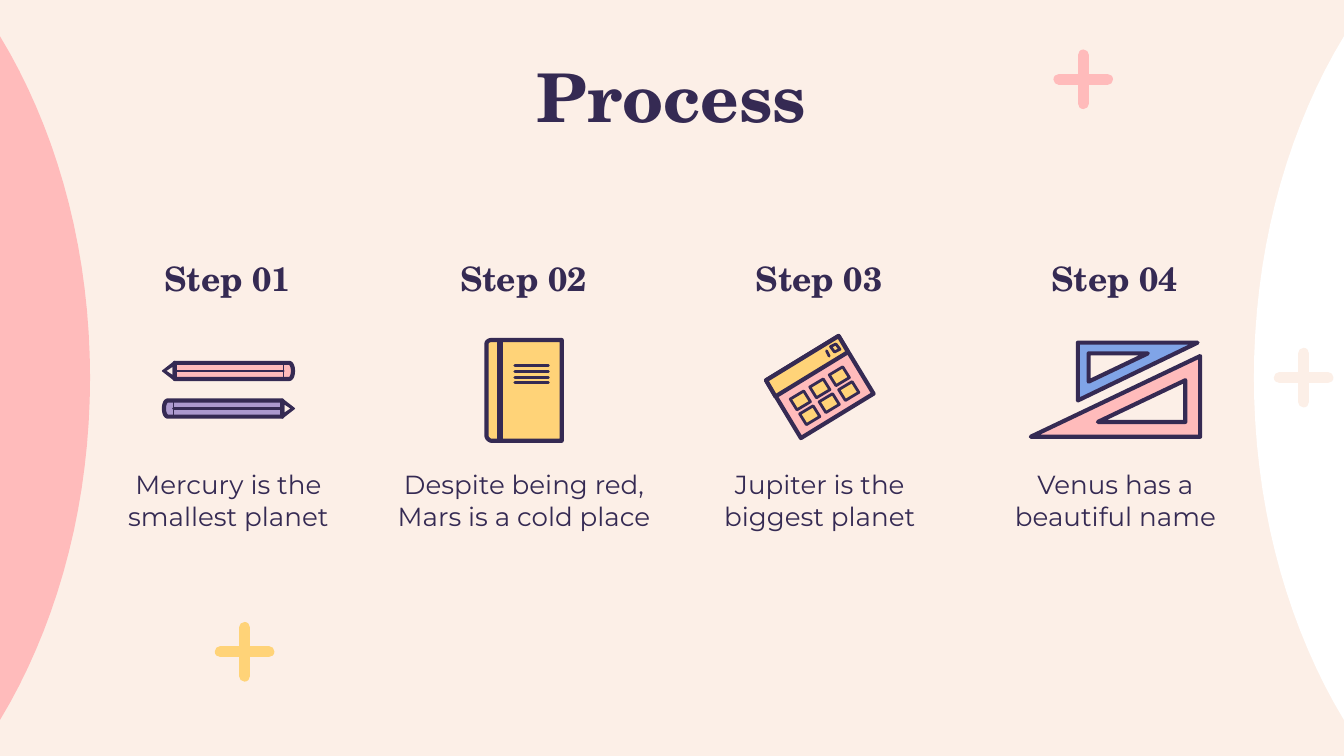
from lxml.etree import SubElement
from pptx import Presentation
from pptx.dml.color import RGBColor
from pptx.enum.shapes import MSO_CONNECTOR
from pptx.enum.text import MSO_ANCHOR, PP_ALIGN
from pptx.oxml.ns import qn
from pptx.util import Cm, Pt

INK, CREAM, PINK, YELLOW = "352A53", "FCEFE7", "FFBBBB", "FFD378"
WHITE, BLUE, PURPLE = "FFFFFF", "80A4E7", "AC99CE"
SERIF, SANS = "TeX Gyre Schola", "Montserrat"
W = 10
H = W * 9 / 16

STEPS = [
    ("Step 01", "Mercury is the smallest planet"),
    ("Step 02", "Despite being red, Mars is a cold place"),
    ("Step 03", "Jupiter is the biggest planet"),
    ("Step 04", "Venus has a beautiful name"),
]
PLUSES = [(8.06, 0.59, PINK), (9.7, 2.81, CREAM), (1.82, 4.85, YELLOW)]

# Outlines in inches: pairs are corners, sextuples are Bezier curves.
SIDE_ARC = [(9.33, 2.81), (9.33, 1.45, 9.83, 0.25, 10.59, -0.47), (11.85, -0.47),
            (11.85, 6.1), (10.59, 6.1), (9.83, 5.38, 9.33, 4.17, 9.33, 2.81)]
PENCIL_BODY = [(1.3, 2.7), (1.3, 2.82), (2.15, 2.82),
               (2.17, 2.82, 2.18, 2.79, 2.18, 2.76), (2.18, 2.73, 2.17, 2.7, 2.15, 2.7)]
PENCIL_TIP = [[(1.29, 2.72), (1.29, 2.8), (1.23, 2.76)],
              [(1.3, 2.69), (1.21, 2.76), (1.3, 2.83)]]
BOOK = [(3.66, 2.53), (3.64, 2.53, 3.62, 2.54, 3.62, 2.56), (3.62, 3.24),
        (3.62, 3.26, 3.64, 3.28, 3.66, 3.28), (4.18, 3.28), (4.18, 2.53)]
SET_SQUARES = [
    (PINK, [[(8.82, 2.83), (8.82, 3.14), (8.17, 3.14)],
            [(8.93, 2.65), (7.67, 3.25), (8.93, 3.25)]]),
    (BLUE, [[(8.54, 2.63), (8.1, 2.84), (8.1, 2.63)],
            [(8.02, 2.55), (8.02, 2.98), (8.91, 2.55)]]),
]
CALCULATOR = [(6.24, 2.5), (5.7, 2.83), (5.96, 3.26), (6.5, 2.93)]
DISPLAY = [(6.24, 2.5), (5.7, 2.83), (5.77, 2.95), (6.31, 2.62)]
KEY = [(5.98, 2.91), (5.88, 2.97), (5.93, 3.05), (6.03, 2.99)]
BUTTON = [(6.18, 2.58), (6.22, 2.56), (6.25, 2.6), (6.21, 2.62)]

prs = Presentation()
prs.slide_width, prs.slide_height = Cm(W * 2.54), Cm(H * 2.54)
s = prs.slides.add_slide(prs.slide_layouts[6])


def color(hex_string):
    return RGBColor.from_string(hex_string)


def emu(*inches):
    return [Cm(v * 2.54) for v in inches]


def style_line(line, hex_string, width):
    """Solid line with round ends and joins."""
    line.color.rgb, line.width = color(hex_string), Pt(width)
    ln = line._get_or_add_ln()
    ln.set("cap", "rnd")
    SubElement(ln, qn("a:round"))


def flatten(outline, steps=24):
    """Turn the curves of an outline into short straight pieces."""
    points = []
    for node in outline:
        if len(node) == 2:
            points.append(node)
            continue
        ends = [points[-1], node[:2], node[2:4], node[4:]]
        for i in range(1, steps + 1):
            t = i / steps
            weights = ((1 - t) ** 3, 3 * t * (1 - t) ** 2, 3 * t * t * (1 - t), t ** 3)
            points.append(tuple(sum(k * e[axis] for k, e in zip(weights, ends))
                                for axis in (0, 1)))
    return points


def polygon(*outlines, fill=None, width=2.25):
    contours = [[emu(*p) for p in flatten(o)] for o in outlines]
    builder = s.shapes.build_freeform(*contours[0][0])
    for i, contour in enumerate(contours):
        if i:
            builder.move_to(*contour[0])
        builder.add_line_segments(contour[1:], close=True)
    sp = builder.convert_to_shape()
    sp.shadow.inherit = False
    if fill:
        sp.fill.solid()
        sp.fill.fore_color.rgb = color(fill)
    else:
        sp.fill.background()
    if width:
        style_line(sp.line, INK, width)
    else:
        sp.line.fill.background()


def stroke(x1, y1, x2, y2, hex_string=INK, width=1.5):
    c = s.shapes.add_connector(MSO_CONNECTOR.STRAIGHT, *emu(x1, y1, x2, y2))
    style_line(c.line, hex_string, width)
    SubElement(c._element.spPr, qn("a:effectLst"))


def text(content, box, size, font=SERIF, bold=True, anchor=MSO_ANCHOR.MIDDLE, spacing=None):
    tf = s.shapes.add_textbox(*emu(*box)).text_frame
    tf.word_wrap, tf.vertical_anchor = True, anchor
    tf.margin_left = tf.margin_right = tf.margin_top = tf.margin_bottom = Cm(0.25)
    p = tf.paragraphs[0]
    p.alignment, p.line_spacing = PP_ALIGN.CENTER, spacing
    r = p.add_run()
    r.text = content
    r.font.name, r.font.size, r.font.bold = font, Pt(size), bold
    r.font.color.rgb = color(INK)


def flip(outline, cx, cy=None):
    """Mirror an outline about x = cx and, when given, about y = cy."""
    return [tuple(2 * cx - v if i % 2 == 0 else v if cy is None else 2 * cy - v
                  for i, v in enumerate(node)) for node in outline]


def shift(outline, dx, dy):
    return [(x + dx, y + dy) for x, y in outline]


def pencil(fill, place):
    polygon(place(PENCIL_BODY), fill=fill)
    for ends, width in (([(2.11, 2.7), (2.11, 2.82)], 0.75),
                        ([(1.3, 2.76), (2.11, 2.76)], 1.25)):
        (x1, y1), (x2, y2) = place(ends)
        stroke(x1, y1, x2, y2, width=width)
    polygon(*map(place, PENCIL_TIP), fill=INK, width=0.75)


s.background.fill.solid()
s.background.fill.fore_color.rgb = color(CREAM)
polygon(SIDE_ARC, fill=WHITE, width=0)
polygon(flip(SIDE_ARC, W / 2), fill=PINK, width=0)
arm = 0.18
for x, y, hue in PLUSES:
    stroke(x, y - arm, x, y + arm, hue, 6)
    stroke(x - arm, y, x + arm, y, hue, 6)

text("Process", (0.77, 0.45, 8.45, 0.63), 36, spacing=0.8)
for i, (heading, body) in enumerate(STEPS):
    text(heading, (0.72 + 2.2 * i, 1.84, 1.95, 0.46), 18)
    text(body, (0.61 + 2.2 * i, 3.39, 2.18, 0.74), 14, font=SANS, bold=False,
         anchor=MSO_ANCHOR.TOP)

pencil(PINK, lambda o: o)
pencil(PURPLE, lambda o: flip(o, 1.7, 2.9))

polygon(BOOK, fill=YELLOW)
stroke(3.72, 2.54, 3.72, 3.27, width=3)
for i in range(4):
    y = 2.72 + 0.043 * i
    stroke(3.83, y, 4.08, y)

for fill, outlines in SET_SQUARES:
    polygon(*outlines, fill=fill)

polygon(CALCULATOR, fill=PINK)
polygon(DISPLAY, fill=YELLOW)
for row in range(2):
    for col in range(3):
        polygon(shift(KEY, 0.145 * col + 0.07 * row, 0.11 * row - 0.09 * col),
                fill=YELLOW, width=1.5)
polygon(BUTTON, width=1.5)
stroke(6.15, 2.61, 6.17, 2.65)

prs.save("out.pptx")
